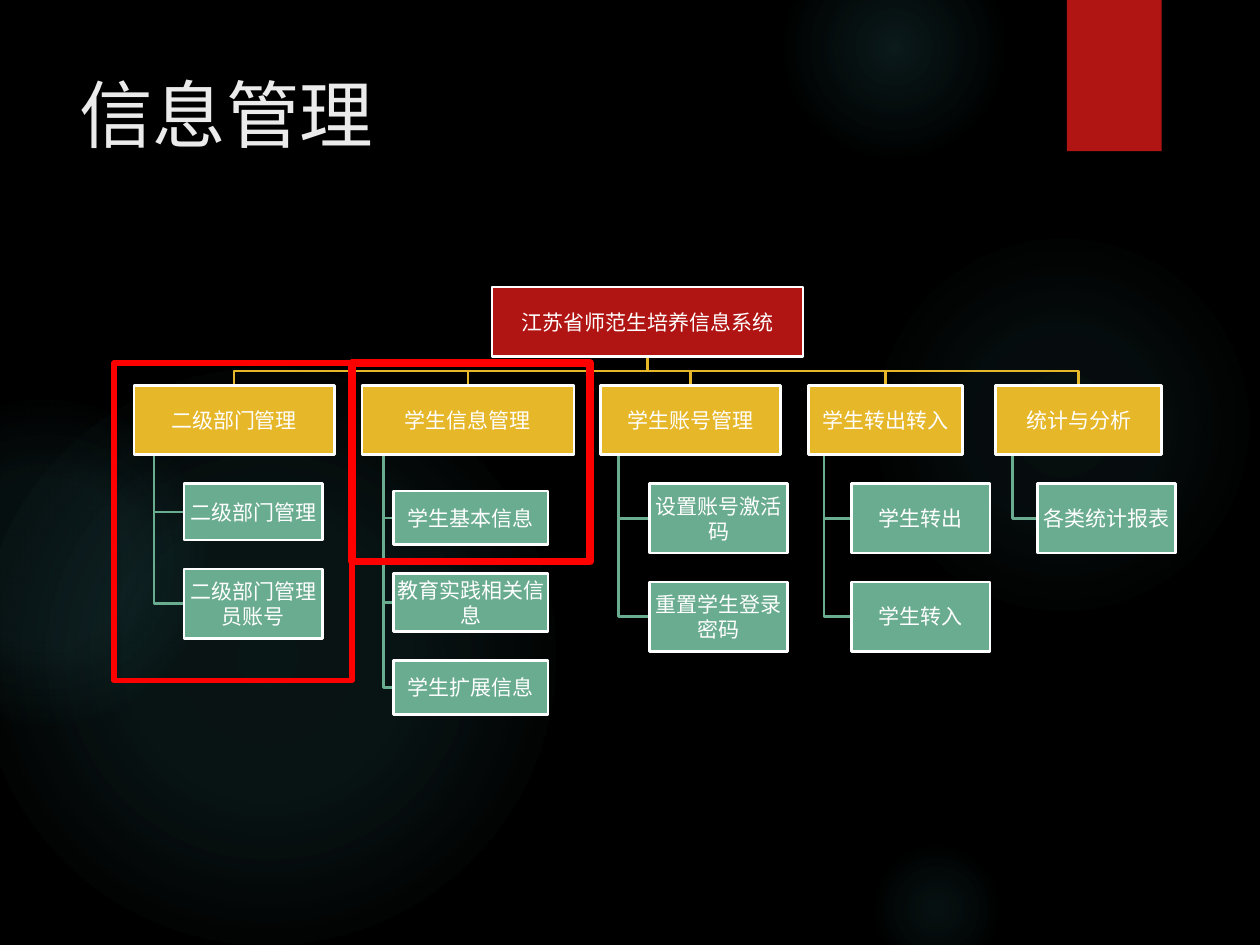
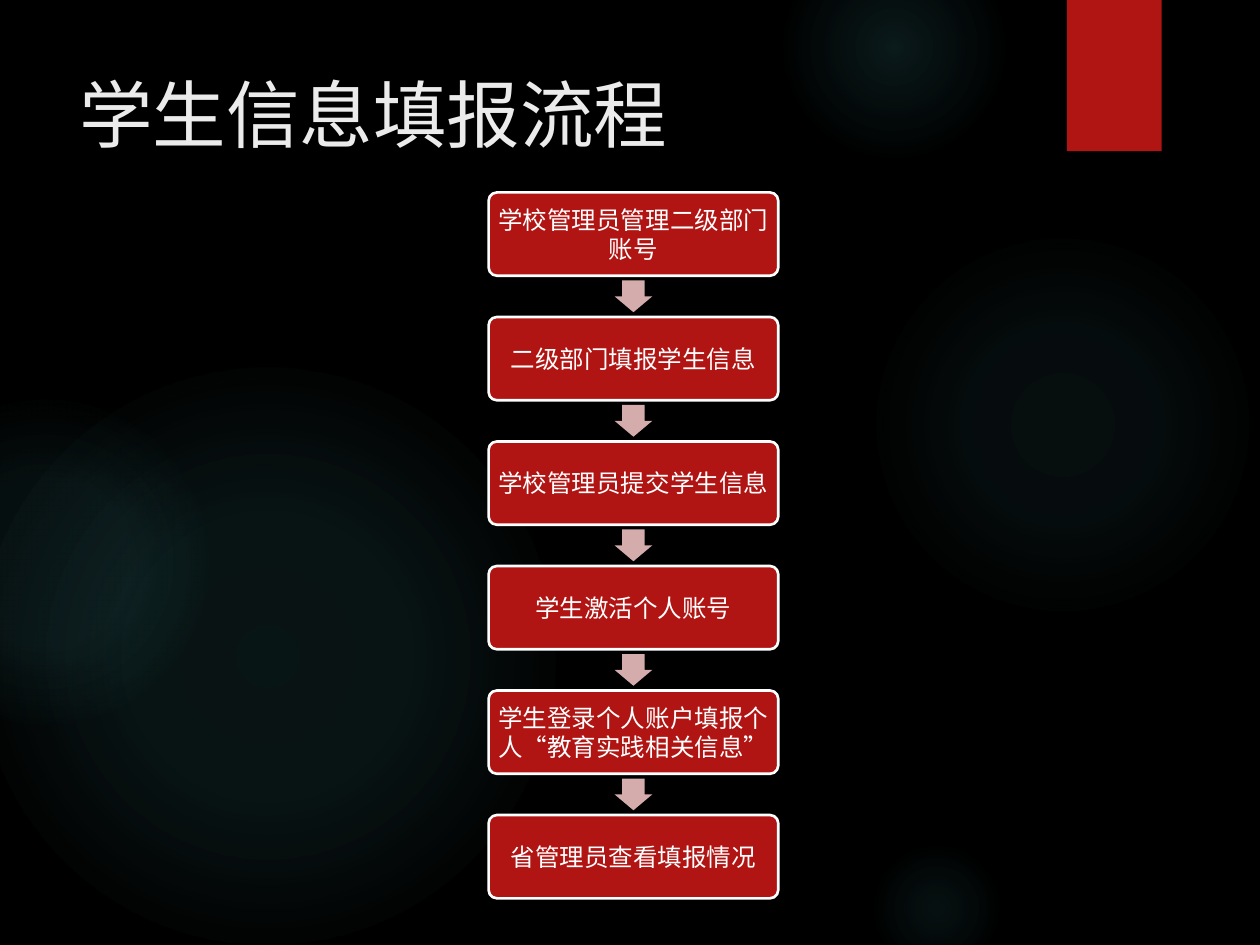
from pptx import Presentation
from pptx.dml.color import RGBColor
from pptx.enum.shapes import MSO_SHAPE
from pptx.enum.text import MSO_ANCHOR, PP_ALIGN
from pptx.oxml import parse_xml
from pptx.oxml.ns import nsdecls, qn
from pptx.util import Cm, Pt

FONT = "League Spartan"
BLACK, WHITE, TITLE_GREY = "000000", "FFFFFF", "EBEBEB"
RED, YELLOW, GREEN = "B01513", "E6B729", "6AAC90"
GLOW, ARROW_PINK, HIGHLIGHT = "50B9C1", "D4ACAB", "FF0000"

# left, top, diameter, then (position, opacity) stops in percent
GLOWS = [
    (17.5, 4.65, 7.82, [(0, 7), (36, 6), (69, 0)]),
    (15.8, -1.27, 4.45, [(0, 14), (36, 7), (73, 0)]),
    (17.5, 16.94, 2.74, [(0, 9), (36, 5), (66, 0)]),
    (-0.43, 7.42, 11.63, [(0, 11), (36, 10), (75, 0)]),
    (-2.34, 8.05, 6.55, [(0, 8), (36, 8), (72, 0)]),
]

# Each branch: title, left, width, leaf left, leaf width, first leaf top, leaves (text, height)
BRANCHES = [
    ("二级部门管理", 2.7, 4.04, 3.71, 2.79, 9.75,
     [("二级部门管理", 1.14), ("二级部门管理员账号", 1.4)]),
    ("学生信息管理", 7.3, 4.27, 7.93, 3.12, 9.9,
     [("学生基本信息", 1.08), ("教育实践相关信息", 1.17), ("学生扩展信息", 1.1)]),
    ("学生账号管理", 12.1, 3.63, 13.09, 2.79, 9.75,
     [("设置账号激活码", 1.4), ("重置学生登录密码", 1.4)]),
    ("学生转出转入", 16.3, 3.1, 17.17, 2.79, 9.75,
     [("学生转出", 1.4), ("学生转入", 1.4)]),
    ("统计与分析", 20.07, 3.35, 20.91, 2.79, 9.75,
     [("各类统计报表", 1.4)]),
]

STEPS = [
    "学校管理员管理二级部门账号",
    "二级部门填报学生信息",
    "学校管理员提交学生信息",
    "学生激活个人账号",
    "学生登录个人账户填报个人“教育实践相关信息”",
    "省管理员查看填报情况",
]


def color(hex_string):
    return RGBColor.from_string(hex_string)


def set_line(shape, line_color, width):
    if line_color is None:
        shape.line.fill.background()
    else:
        shape.line.color.rgb = color(line_color)
        shape.line.width = Pt(width)


def add_box(slide, kind, box, fill=None, line_color=None, line_width=1.5):
    """Add a preset shape; box is (left, top, width, height) in centimetres."""
    shape = slide.shapes.add_shape(kind, *map(Cm, box))
    shape.shadow.inherit = False
    if fill is None:
        shape.fill.background()
    else:
        shape.fill.solid()
        shape.fill.fore_color.rgb = color(fill)
    set_line(shape, line_color, line_width)
    return shape


def add_label_box(slide, kind, box, fill, text, size, inset):
    shape = add_box(slide, kind, box, fill, WHITE)
    frame = shape.text_frame
    frame.word_wrap = True
    frame.vertical_anchor = MSO_ANCHOR.MIDDLE
    frame.margin_left = frame.margin_right = Cm(inset)
    frame.margin_top = frame.margin_bottom = Cm(inset)
    frame.text = text
    paragraph = frame.paragraphs[0]
    paragraph.alignment = PP_ALIGN.CENTER
    format_font(paragraph.font, size, WHITE)
    return shape


def format_font(font, size, font_color):
    font.name = FONT
    font.size = Pt(size)
    font.color.rgb = color(font_color)


def add_polyline(slide, points, line_color):
    points = [(Cm(x), Cm(y)) for x, y in points]
    builder = slide.shapes.build_freeform(*points[0])
    builder.add_line_segments(points[1:], close=False)
    shape = builder.convert_to_shape()
    shape.shadow.inherit = False
    shape.fill.background()
    set_line(shape, line_color, 1.5)


def add_glow(slide, left, top, diameter, stops):
    shape = add_box(slide, MSO_SHAPE.OVAL, (left, top, diameter, diameter))
    stop_xml = "".join(
        f'<a:gs pos="{position * 1000}"><a:srgbClr val="{GLOW}">'
        f'<a:alpha val="{opacity * 1000}"/></a:srgbClr></a:gs>'
        for position, opacity in stops)
    gradient = parse_xml(
        f'<a:gradFill {nsdecls("a")}><a:gsLst>{stop_xml}</a:gsLst><a:path path="circle">'
        '<a:fillToRect l="50000" t="50000" r="50000" b="50000"/></a:path></a:gradFill>')
    properties = shape.element.spPr
    properties.replace(properties.find(qn("a:noFill")), gradient)
    return shape


def decorate_layout(layout, slide):
    """Build the shared backdrop on the slide and move it to the layout."""
    layout.background.fill.solid()
    layout.background.fill.fore_color.rgb = color(BLACK)
    tree = layout.shapes.element
    for placeholder in list(layout.placeholders)[1:]:
        tree.remove(placeholder.element)
    backdrop = [add_glow(slide, *glow) for glow in GLOWS]
    backdrop.append(add_box(slide, MSO_SHAPE.RECTANGLE, (21.51, 0, 1.91, 3.05), RED))
    for shape in backdrop:
        tree.append(shape.element)


def add_title_slide(presentation, layout, text):
    slide = presentation.slides.add_slide(layout)
    title = slide.shapes.title
    title.left, title.top, title.width, title.height = map(Cm, (1.34, 1.27, 19.61, 3.89))
    title.text_frame.text = text
    title.text_frame.vertical_anchor = MSO_ANCHOR.TOP
    paragraph = title.text_frame.paragraphs[0]
    paragraph.alignment = PP_ALIGN.LEFT
    format_font(paragraph.font, 42, TITLE_GREY)
    return slide


def add_branch(slide, top, gap, root_center, branch):
    """Add one branch below the root, with its leaves and lines."""
    title, left, width, leaf_left, leaf_width, leaf_top, leaves = branch
    height = 1.4
    center, trunk = left + width / 2, left + width / 10
    add_polyline(slide, [(root_center, top - gap), (root_center, top - gap / 2),
                         (center, top - gap / 2), (center, top)], YELLOW)
    for text, leaf_height in leaves:
        middle = leaf_top + leaf_height / 2
        add_polyline(slide, [(trunk, top + height), (trunk, middle), (leaf_left, middle)], GREEN)
        add_label_box(slide, MSO_SHAPE.RECTANGLE,
                      (leaf_left, leaf_top, leaf_width, leaf_height), GREEN, text, 12, 0.03)
        leaf_top += leaf_height + gap
    add_label_box(slide, MSO_SHAPE.RECTANGLE, (left, top, width, height), YELLOW, title, 12, 0.03)


def add_system_chart(slide, root_box):
    left, top, width, height = root_box
    gap = 0.58
    for branch in BRANCHES:
        add_branch(slide, top + height + gap, gap, left + width / 2, branch)
    add_label_box(slide, MSO_SHAPE.RECTANGLE, root_box, RED, "江苏省师范生培养信息系统", 12, 0.03)


def add_highlights(slide, left, top, width):
    for index, (height, line_width) in enumerate([(6.4, 3), (4, 4.5)]):
        add_box(slide, MSO_SHAPE.RECTANGLE, (left + index * width, top, width, height),
                line_color=HIGHLIGHT, line_width=line_width)


def add_process(slide, first_box):
    """Stack the steps below the first box, with an arrow in each gap."""
    left, top, width, height = first_box
    pitch, arrow_width, arrow_height = 2.51, 0.76, 0.64
    for index, text in enumerate(STEPS):
        step_top = top + index * pitch
        if index:
            arrow_top = step_top - (pitch - height + arrow_height) / 2
            arrow = add_box(slide, MSO_SHAPE.DOWN_ARROW,
                            (left + (width - arrow_width) / 2, arrow_top,
                             arrow_width, arrow_height), ARROW_PINK)
            arrow.adjustments[0], arrow.adjustments[1] = 0.6, 0.5
        step = add_label_box(slide, MSO_SHAPE.ROUNDED_RECTANGLE,
                             (left, step_top, width, height), RED, text, 14, 0.09)
        step.adjustments[0] = 0.1


def main():
    presentation = Presentation()
    presentation.slide_width, presentation.slide_height = Cm(25.4), Cm(19.05)
    layout = presentation.slide_layouts[5]

    slide = add_title_slide(presentation, layout, "信息管理")
    decorate_layout(layout, slide)
    add_system_chart(slide, (9.92, 5.79, 6.27, 1.4))
    add_highlights(slide, 2.3, 7.32, 4.8)

    slide = add_title_slide(presentation, layout, "学生信息填报流程")
    add_process(slide, (9.85, 3.88, 5.84, 1.68))

    presentation.save("out.pptx")


if __name__ == "__main__":
    main()
